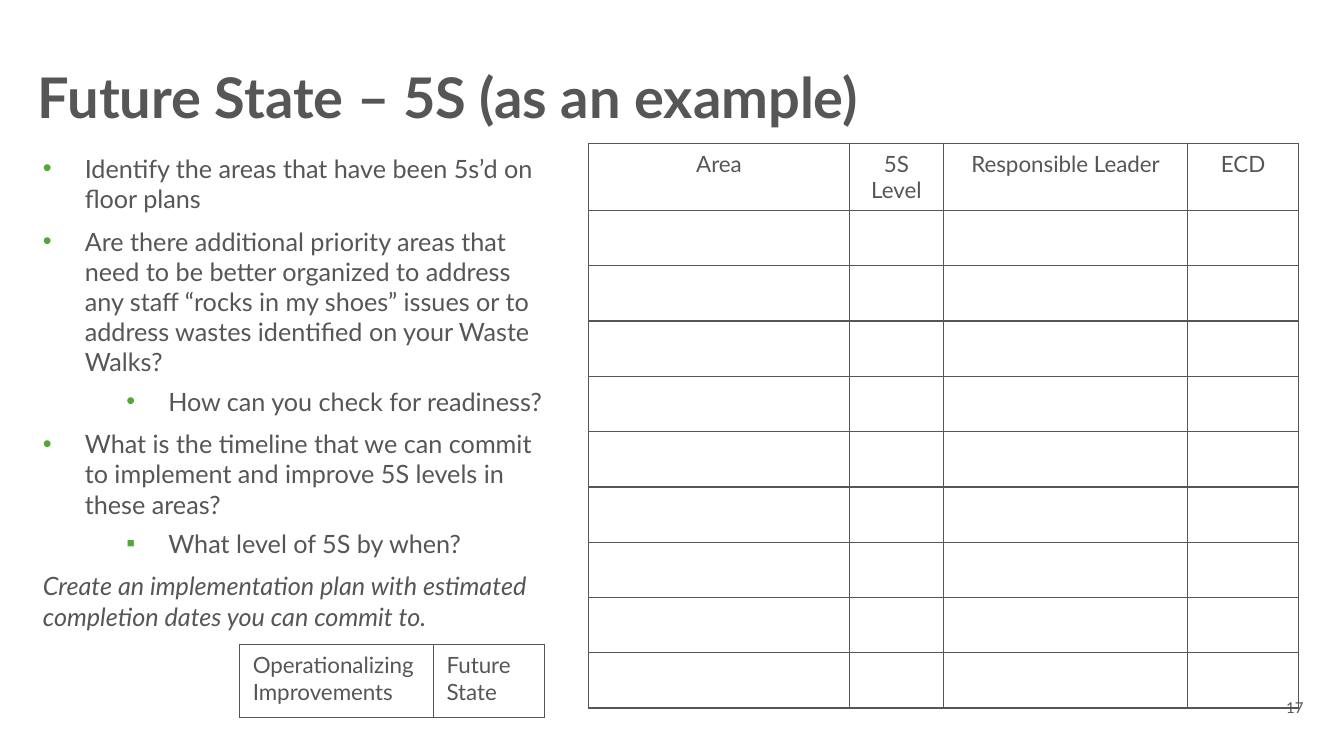
import pptx
import pptx.util
import pptx.dml.color
import pptx.enum.text
import pptx.oxml.ns
import lxml.etree

Pt = pptx.util.Pt
ALIGN = pptx.enum.text.PP_ALIGN
ANCHOR = pptx.enum.text.MSO_ANCHOR
COLORS = {"text": "565656", "bullet": "55A63A"}
FONT = "Lato"


def add_text(slide, box, insets, paragraphs, size, anchor=ANCHOR.TOP):
    sp = slide.shapes.add_textbox(*[Pt(v) for v in box])
    tf = sp.text_frame
    tf.word_wrap = True
    tf.vertical_anchor = anchor
    tf.margin_left, tf.margin_top, tf.margin_right, tf.margin_bottom = [Pt(v) for v in insets]
    for i, text in enumerate(paragraphs):
        p = tf.paragraphs[0] if i == 0 else tf.add_paragraph()
        p.text = text
        for r in p.runs:
            r.font.name = FONT
            r.font.size = Pt(size)
            r.font.color.rgb = pptx.dml.color.RGBColor.from_string(COLORS["text"])
    return tf


def add_grid(slide, left, top, widths, heights, headings, align):
    frame = slide.shapes.add_table(len(heights), len(widths), Pt(left), Pt(top),
                                   Pt(sum(widths)), Pt(sum(heights)))
    table = frame.table
    table.first_row = False
    table.horz_banding = False
    for column, width in zip(table.columns, widths):
        column.width = Pt(width)
    for row, height in zip(table.rows, heights):
        row.height = Pt(height)
    for cell, heading in zip(table.rows[0].cells, headings):
        p = cell.text_frame.paragraphs[0]
        p.text = heading
        p.alignment = align
        r = p.runs[0]
        r.font.name = FONT
        r.font.size = Pt(16)
        r.font.color.rgb = pptx.dml.color.RGBColor.from_string(COLORS["text"])
    for cell in table.iter_cells():
        cell.margin_left = cell.margin_right = Pt(9.6)
        cell.margin_top = cell.margin_bottom = Pt(4.8)
        tc_pr = cell._tc.get_or_add_tcPr()
        for side in ("a:lnL", "a:lnR", "a:lnT", "a:lnB"):
            ln = lxml.etree.SubElement(tc_pr, pptx.oxml.ns.qn(side), w=str(Pt(1)))
            fill = lxml.etree.SubElement(ln, pptx.oxml.ns.qn("a:solidFill"))
            lxml.etree.SubElement(fill, pptx.oxml.ns.qn("a:srgbClr"), val=COLORS["text"])
        cell.fill.background()


prs = pptx.Presentation()
prs.slide_width, prs.slide_height = Pt(960), Pt(540)
slide = prs.slides.add_slide(prs.slide_layouts[6])

tf = add_text(slide, (870.5, 491, 67.7, 28.8), (7.2, 3.6, 7.2, 3.6), ["17"], 10.7, ANCHOR.MIDDLE)
tf.paragraphs[0].alignment = ALIGN.RIGHT

tf = add_text(slide, (21, 15.1, 906.5, 106.6), (6, 0, 0, 0),
              ["Future State – 5S (as an example)"], 40, ANCHOR.MIDDLE)
tf.paragraphs[0].runs[0].font.bold = True

questions = [
    (0, "•", "Identify the areas that have been 5s’d on floor plans"),
    (0, "•", "Are there additional priority areas that need to be better organized to address "
             "any staff “rocks in my shoes” issues or to address wastes identified on your Waste Walks?"),
    (1, "•", "How can you check for readiness?"),
    (0, "•", "What is the timeline that we can commit to implement and improve 5S levels in these areas?"),
    (1, "▪", "What level of 5S by when?"),
    (0, None, "Create an implementation plan with estimated completion dates you can commit to."),
]
tf = add_text(slide, (21, 104.4, 377.3, 373), (9.6, 4.8, 9.6, 4.8),
              [text for level, bullet, text in questions], 18)
for i, (p, (level, bullet, text)) in enumerate(zip(tf.paragraphs, questions)):
    p.level = level
    if i:
        p.space_before = Pt(6.3 if level else 8.9)
    if not bullet:
        p.runs[0].font.italic = True
        continue
    p_pr = p._p.get_or_add_pPr()
    p_pr.set("marL", str(Pt(89.6 if level else 30)))
    p_pr.set("indent", str(Pt(-30)))
    color = lxml.etree.SubElement(p_pr, pptx.oxml.ns.qn("a:buClr"))
    lxml.etree.SubElement(color, pptx.oxml.ns.qn("a:srgbClr"), val=COLORS["bullet"])
    lxml.etree.SubElement(p_pr, pptx.oxml.ns.qn("a:buFont"), typeface="Arial")
    lxml.etree.SubElement(p_pr, pptx.oxml.ns.qn("a:buChar"), char=bullet)

add_grid(slide, 420.6, 102.4, [186, 67.5, 174.2, 79.4], [48] + [39.5] * 9,
         ["Area", "5S Level", "Responsible Leader", "ECD"], ALIGN.CENTER)
add_grid(slide, 171, 460.6, [138.4, 79.4], [51.8],
         ["Operationalizing Improvements", "Future State"], ALIGN.LEFT)

prs.save("out.pptx")
